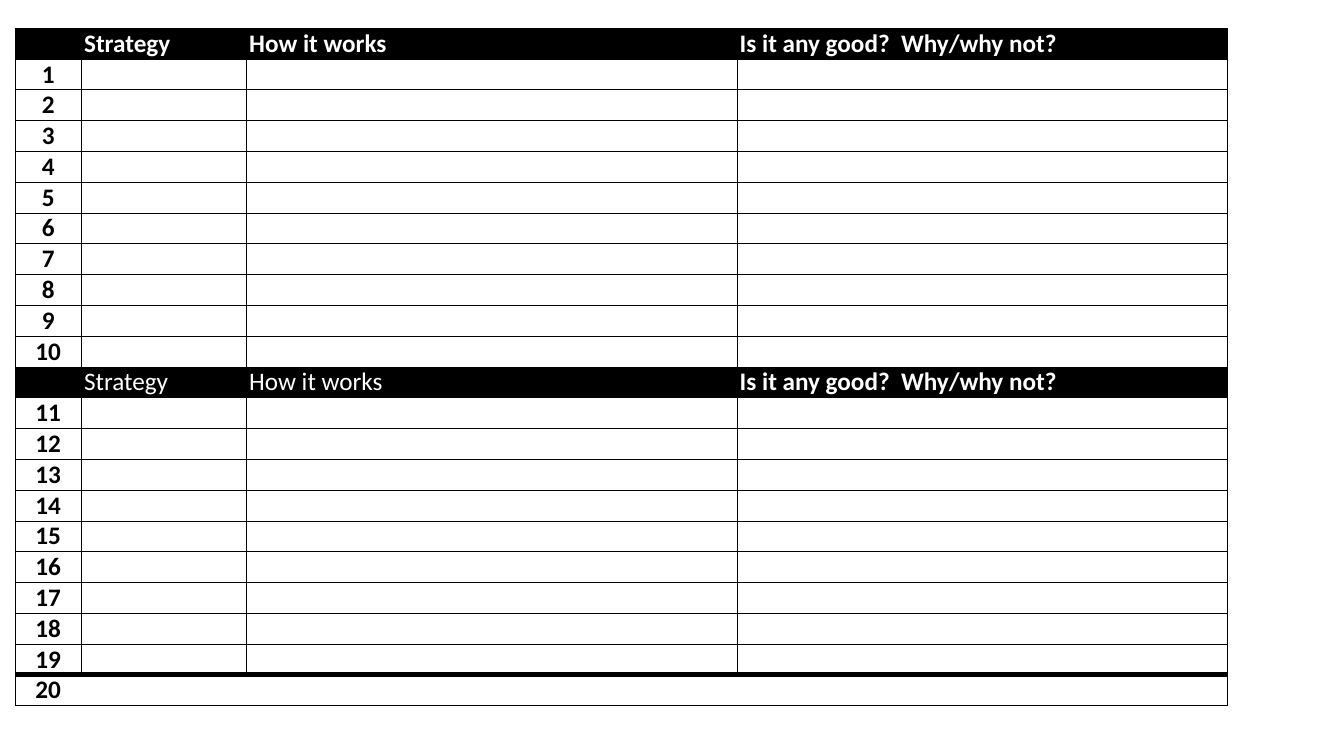
from dataclasses import dataclass

import lxml.etree
import pptx
import pptx.dml.color
import pptx.enum.text
import pptx.oxml.ns
import pptx.util
from pptx.util import Cm

BLACK, WHITE = "000000", "FFFFFF"
THIN, THICK, NONE = 0.5, 4, 0
COLUMN_WIDTHS = (1.67, 4.16, 12.36, 12.36)
ROW_HEIGHT = 0.77
HEADINGS = ("", "Strategy", "How it works", "Is it any good?  Why/why not?")


@dataclass
class StrategyRow:
    texts: tuple[str, ...]
    heading: bool = False
    bold: tuple[bool, ...] = (True,) * 4
    top: float = THIN
    bottom: float = THIN
    inner: float = THIN


def rgb(value: str) -> pptx.dml.color.RGBColor:
    return pptx.dml.color.RGBColor.from_string(value)


def numbered(number: int) -> StrategyRow:
    return StrategyRow((str(number), "", "", ""))


def set_borders(cell, left: float, right: float, top: float, bottom: float) -> None:
    properties = cell._tc.get_or_add_tcPr()
    for side, points in zip("LRTB", (left, right, top, bottom)):
        line = lxml.etree.SubElement(
            properties, pptx.oxml.ns.qn(f"a:ln{side}"), w=str(pptx.util.Pt(points)))
        kind = "a:solidFill" if points else "a:noFill"
        fill = lxml.etree.SubElement(line, pptx.oxml.ns.qn(kind))
        if points:
            lxml.etree.SubElement(fill, pptx.oxml.ns.qn("a:srgbClr"), val=BLACK)


def fill_cell(cell, row: StrategyRow, column: int) -> None:
    last = len(COLUMN_WIDTHS) - 1
    set_borders(cell, THIN if column == 0 else row.inner,
                THIN if column == last else row.inner, row.top, row.bottom)
    cell.fill.solid()
    cell.fill.fore_color.rgb = rgb(BLACK if row.heading else WHITE)
    cell.margin_left = cell.margin_right = Cm(0.07)
    cell.margin_top = cell.margin_bottom = 0
    cell.vertical_anchor = pptx.enum.text.MSO_ANCHOR.MIDDLE
    cell.text = row.texts[column]
    paragraph = cell.text_frame.paragraphs[0]
    if column == 0:
        paragraph.alignment = pptx.enum.text.PP_ALIGN.CENTER
    paragraph.font.name = "Calibri"
    paragraph.font.size = pptx.util.Pt(18)
    paragraph.font.bold = row.bold[column]
    paragraph.font.color.rgb = rgb(WHITE if row.heading else BLACK)


def main() -> None:
    presentation = pptx.Presentation()
    presentation.slide_width, presentation.slide_height = Cm(33.87), Cm(19.05)
    slide = presentation.slides.add_slide(presentation.slide_layouts[6])

    # Two blocks of ten strategies, the last one set apart by a thick rule
    rows = [
        StrategyRow(HEADINGS, heading=True),
        *map(numbered, range(1, 11)),
        StrategyRow(HEADINGS, heading=True, bold=(False, False, False, True)),
        *map(numbered, range(11, 21)),
    ]
    rows[-2].bottom = rows[-1].top = THICK
    rows[-1].inner = NONE

    # Worksheet table
    strategies = slide.shapes.add_table(
        len(rows), len(COLUMN_WIDTHS), Cm(0.38), Cm(0.71),
        Cm(sum(COLUMN_WIDTHS)), Cm(ROW_HEIGHT * len(rows))).table
    strategies.first_row = strategies.horz_banding = False
    for column, width in zip(strategies.columns, COLUMN_WIDTHS):
        column.width = Cm(width)
    for index, row in enumerate(rows):
        strategies.rows[index].height = Cm(ROW_HEIGHT)
        for column in range(len(COLUMN_WIDTHS)):
            fill_cell(strategies.cell(index, column), row, column)

    presentation.save("out.pptx")


if __name__ == "__main__":
    main()
